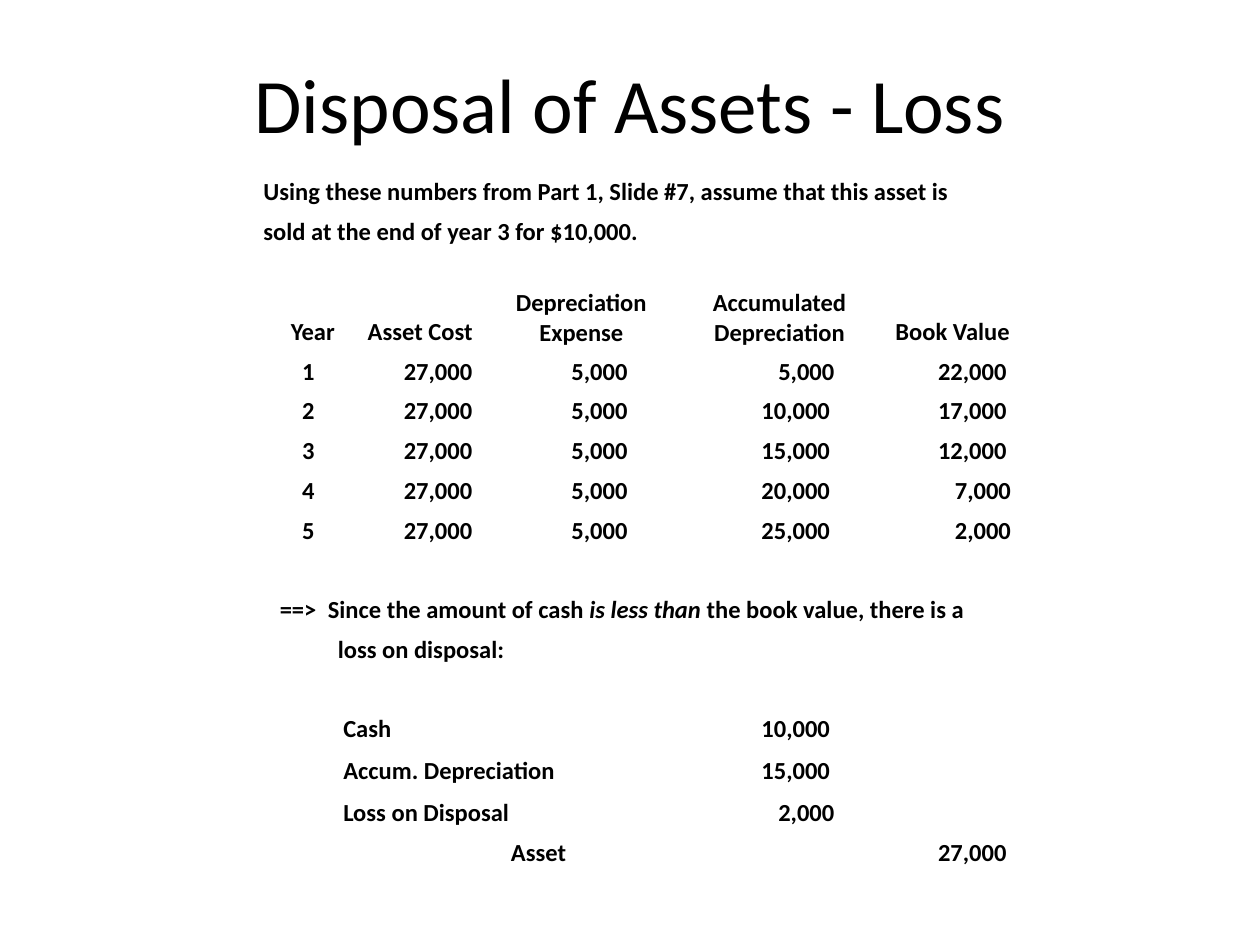
import lxml.etree
import pptx
import pptx.dml.color
import pptx.enum.text
import pptx.oxml.ns
import pptx.util

Cm = pptx.util.Cm
Align = pptx.enum.text.PP_ALIGN
Anchor = pptx.enum.text.MSO_ANCHOR
COLORS = {"text": "000000"}


def write(text, paragraph, size=14, bold=True, italic=False, align=Align.LEFT):
    paragraph.alignment = align
    span = paragraph.add_run()
    span.text = text
    span.font.name = "Calibri"
    span.font.size = pptx.util.Pt(size)
    span.font.bold = bold
    span.font.italic = italic
    span.font.color.rgb = pptx.dml.color.RGBColor.from_string(COLORS["text"])


deck = pptx.Presentation()
deck.slide_width = Cm(25.4)
deck.slide_height = Cm(19.05)
page = deck.slides.add_slide(deck.slide_layouts[6])

title = page.shapes.add_textbox(Cm(1.27), Cm(0.76), Cm(22.86), Cm(2.62))
title.text_frame.word_wrap = True
title.text_frame.vertical_anchor = Anchor.MIDDLE
write("Disposal of Assets - Loss", title.text_frame.paragraphs[0],
      size=44, bold=False, align=Align.CENTER)

column_widths = [1.5, 3.38, 3.12, 0.71, 3.45, 3.53]
row_heights = [0.8] * 3 + [1.2] + [0.8] * 10 + [0.85] * 2 + [0.8]
table = page.shapes.add_table(
    len(row_heights), len(column_widths), Cm(5.28), Cm(3.38),
    Cm(sum(column_widths)), Cm(sum(row_heights))).table
table.first_row = False
table.horz_banding = False
for column, width in zip(table.columns, column_widths):
    column.width = Cm(width)
for row, height in zip(table.rows, row_heights):
    row.height = Cm(height)

for cell in table.iter_cells():
    cell.fill.background()
    cell.vertical_anchor = Anchor.BOTTOM
    cell.margin_left = cell.margin_right = cell.margin_top = Cm(0.03)
    cell.margin_bottom = 0
    lxml.etree.SubElement(cell.text_frame.paragraphs[0]._p,
                          pptx.oxml.ns.qn("a:endParaRPr"), sz="1400")

for row, first, last in [(0, 0, 5), (1, 0, 2), (10, 0, 5),
                         (11, 1, 2), (14, 1, 2), (15, 1, 2)]:
    table.cell(row, first).merge(table.cell(row, last))

headings = {0: "Year", 1: "Asset Cost", 2: "Depreciation Expense",
            4: "Accumulated Depreciation", 5: "Book Value"}
for column, heading in headings.items():
    write(heading, table.cell(3, column).text_frame.paragraphs[0],
          align=Align.CENTER if column else Align.RIGHT)

entries = [
    (0, 0, "Using these numbers from Part 1, Slide #7, assume that this asset is", 0.03),
    (1, 0, "sold at the end of year 3 for $10,000.", 0.03),
    (11, 1, "loss on disposal:", 0.03),
    (13, 1, "Cash", 0.14),
    (13, 4, "10,000", 1.36),
    (14, 1, "Accum. Depreciation", 0.14),
    (14, 4, "15,000", 1.36),
    (15, 1, "Loss on Disposal", 0.14),
    (15, 4, "2,000", 1.7),
    (16, 2, "Asset", 0.14),
    (16, 5, "27,000", 1.47),
]
cost, expense = 27000, 5000
for year in range(1, 6):
    accumulated = expense * year
    book = cost - accumulated
    row = year + 3
    entries += [
        (row, 0, str(year), 0.81),
        (row, 1, f"{cost:,}", 1.36),
        (row, 2, f"{expense:,}", 1.36),
        (row, 4, f"{accumulated:,}", 1.36 if accumulated >= 10000 else 1.7),
        (row, 5, f"{book:,}", 1.47 if book >= 10000 else 1.81),
    ]
for row, column, text, indent in entries:
    cell = table.cell(row, column)
    cell.margin_left = Cm(indent)
    write(text, cell.text_frame.paragraphs[0])

conclusion = table.cell(10, 0)
conclusion.margin_left = Cm(0.36)
para = conclusion.text_frame.paragraphs[0]
properties = para._p.get_or_add_pPr()
properties.set("marL", str(Cm(0.97)))
properties.set("indent", str(-Cm(0.97)))
write("==>\tSince the amount of cash ", para)
write("is less than ", para, italic=True)
write("the book value, there is a", para)

deck.save("out.pptx")
